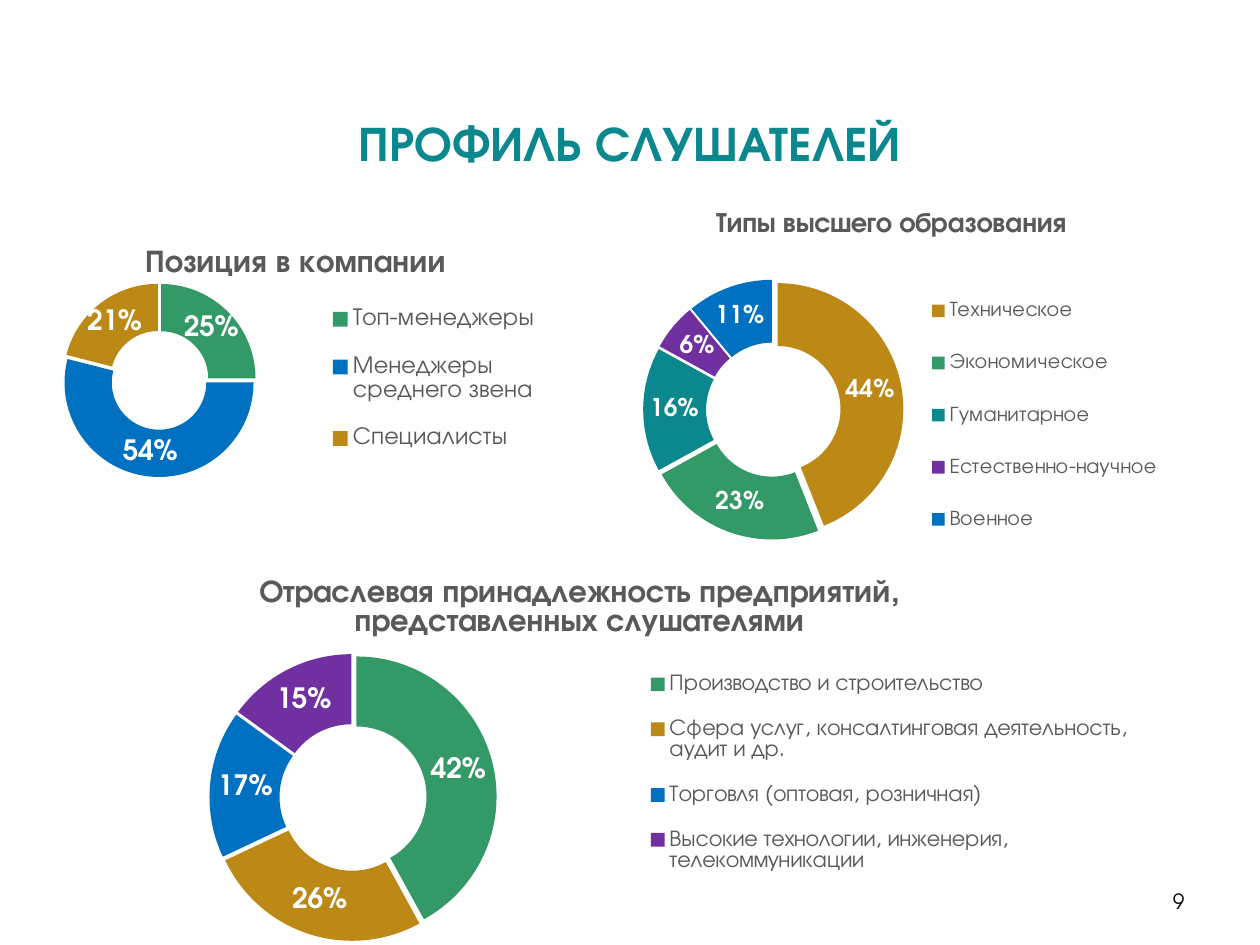
"""Build the slide with three doughnut charts profiling the course participants."""
from lxml import etree
from pptx import Presentation
from pptx.chart.data import CategoryChartData
from pptx.dml.color import RGBColor
from pptx.enum.chart import XL_CHART_TYPE, XL_LEGEND_POSITION
from pptx.enum.text import MSO_ANCHOR, PP_ALIGN
from pptx.oxml.ns import qn
from pptx.util import Inches, Pt

DOUGHNUT = XL_CHART_TYPE.DOUGHNUT
RIGHT_LEGEND = XL_LEGEND_POSITION.RIGHT
MIDDLE = MSO_ANCHOR.MIDDLE
CENTER, RIGHT = PP_ALIGN.CENTER, PP_ALIGN.RIGHT
FONT = "TeX Gyre Adventor"
TEAL = RGBColor(0x0B, 0x87, 0x8E)
GREEN = RGBColor(0x33, 0x99, 0x66)
BLUE = RGBColor(0x00, 0x70, 0xC0)
GOLD = RGBColor(0xBC, 0x88, 0x16)
PURPLE = RGBColor(0x70, 0x30, 0xA0)
GRAY = RGBColor(0x59, 0x59, 0x59)
BLACK = RGBColor(0x00, 0x00, 0x00)
WHITE = RGBColor(0xFF, 0xFF, 0xFF)


def style(font, size, color, bold=False):
    font.name, font.size, font.bold = FONT, Pt(size), bold
    font.color.rgb = color


def place(element, position, inner=False):
    for old in element.findall(qn("c:layout")):
        element.remove(old)
    layout = etree.Element(qn("c:layout"))
    manual = etree.SubElement(layout, qn("c:manualLayout"))
    settings = [("layoutTarget", "inner")] if inner else []
    settings += [("xMode", "edge"), ("yMode", "edge")]
    settings += zip("xywh", position)
    for tag, value in settings:
        etree.SubElement(manual, qn(f"c:{tag}")).set("val", str(value))
    if inner:
        element.insert(0, layout)
    else:
        element.find(qn("c:overlay")).addprevious(layout)


CHARTS = [
    dict(title="Позиция в компании", box=(0.12, 1.86, 4.49, 2.05),
         sizes=(18, 14, 16), hole=32, explosion=5,
         title_at=(0.22, 0.02), plot_at=(0.03, 0.19, 0.45, 0.75),
         legend_at=(0.54, 0.19, 0.4, 0.74),
         slices=[("Топ-менеджеры", 25, GREEN),
                 ("Менеджеры среднего звена", 54, BLUE),
                 ("Специалисты", 21, GOLD)]),
    dict(title="Типы высшего образования", box=(4.97, 1.55, 4.49, 2.91),
         sizes=(16, 12, 14), hole=36, explosion=7,
         title_at=(0.15, 0.02), plot_at=(0.03, 0.2, 0.46, 0.77),
         legend_at=(0.52, 0.2, 0.44, 0.8),
         slices=[("Техническое", 44, GOLD),
                 ("Экономическое", 23, GREEN),
                 ("Гуманитарное", 16, TEAL),
                 ("Естественно-научное", 6, PURPLE),
                 ("Военное", 11, BLUE)]),
    dict(title="Отраслевая принадлежность предприятий, представленных слушателями",
         box=(0.61, 4.46, 8.77, 3.04),
         sizes=(18, 13, 16), hole=33, explosion=5,
         title_at=(0.16, 0.02), plot_at=(0.12, 0.24, 0.26, 0.75),
         legend_at=(0.51, 0.23, 0.45, 0.64),
         slices=[("Производство и строительство", 42, GREEN),
                 ("Сфера услуг, консалтинговая деятельность, аудит и др.", 26, GOLD),
                 ("Торговля (оптовая, розничная)", 17, BLUE),
                 ("Высокие технологии, инженерия, телекоммуникации", 15, PURPLE)]),
]

prs = Presentation()
prs.slide_width, prs.slide_height = Inches(10), Inches(7.5)
s = prs.slides.add_slide(prs.slide_layouts[5])

sp = s.shapes.title
sp.left, sp.top, sp.width, sp.height = Inches(0), Inches(0.84), Inches(10), Inches(0.57)
tf = sp.text_frame
tf.vertical_anchor = MIDDLE
p = tf.paragraphs[0]
p.alignment = CENTER
r = p.add_run()
r.text = "ПРОФИЛЬ СЛУШАТЕЛЕЙ"
style(r.font, 28, TEAL, True)

sp = s.shapes.add_textbox(Inches(7.17), Inches(6.95), Inches(2.33), Inches(0.4))
tf = sp.text_frame
tf.word_wrap = True
tf.vertical_anchor = MIDDLE
p = tf.paragraphs[0]
p.alignment = RIGHT
r = p.add_run()
r.text = "9"
style(r.font, 12, BLACK)

for item in CHARTS:
    title_size, legend_size, label_size = item["sizes"]
    names, values, colors = zip(*item["slices"])
    data = CategoryChartData()
    data.categories = names
    data.add_series("Series 1", values)
    box = [Inches(v) for v in item["box"]]
    chart = s.shapes.add_chart(DOUGHNUT, *box, data).chart
    style(chart.font, title_size, BLACK)

    chart.has_title = True
    p = chart.chart_title.text_frame.paragraphs[0]
    r = p.add_run()
    r.text = item["title"]
    style(r.font, title_size, GRAY, True)
    place(chart.chart_title._element, item["title_at"])

    chart.has_legend = True
    legend = chart.legend
    legend.position = RIGHT_LEGEND
    legend.include_in_layout = False
    style(legend.font, legend_size, GRAY)
    place(legend._element, item["legend_at"])

    plot = chart.plots[0]
    plot.vary_by_categories = True
    place(plot._element.getparent(), item["plot_at"], inner=True)
    plot._element.find(qn("c:holeSize")).set("val", str(item["hole"]))
    series = plot.series[0]
    for i, color in enumerate(colors):
        fill = series.points[i].format.fill
        fill.solid()
        fill.fore_color.rgb = color
    explosion = etree.Element(qn("c:explosion"), val=str(item["explosion"]))
    series._element.find(qn("c:dPt")).addprevious(explosion)

    labels = series.data_labels
    labels.show_percentage, labels.show_value = True, False
    labels.number_format, labels.number_format_is_linked = "0%", False
    style(labels.font, label_size, WHITE, True)

prs.save("out.pptx")
